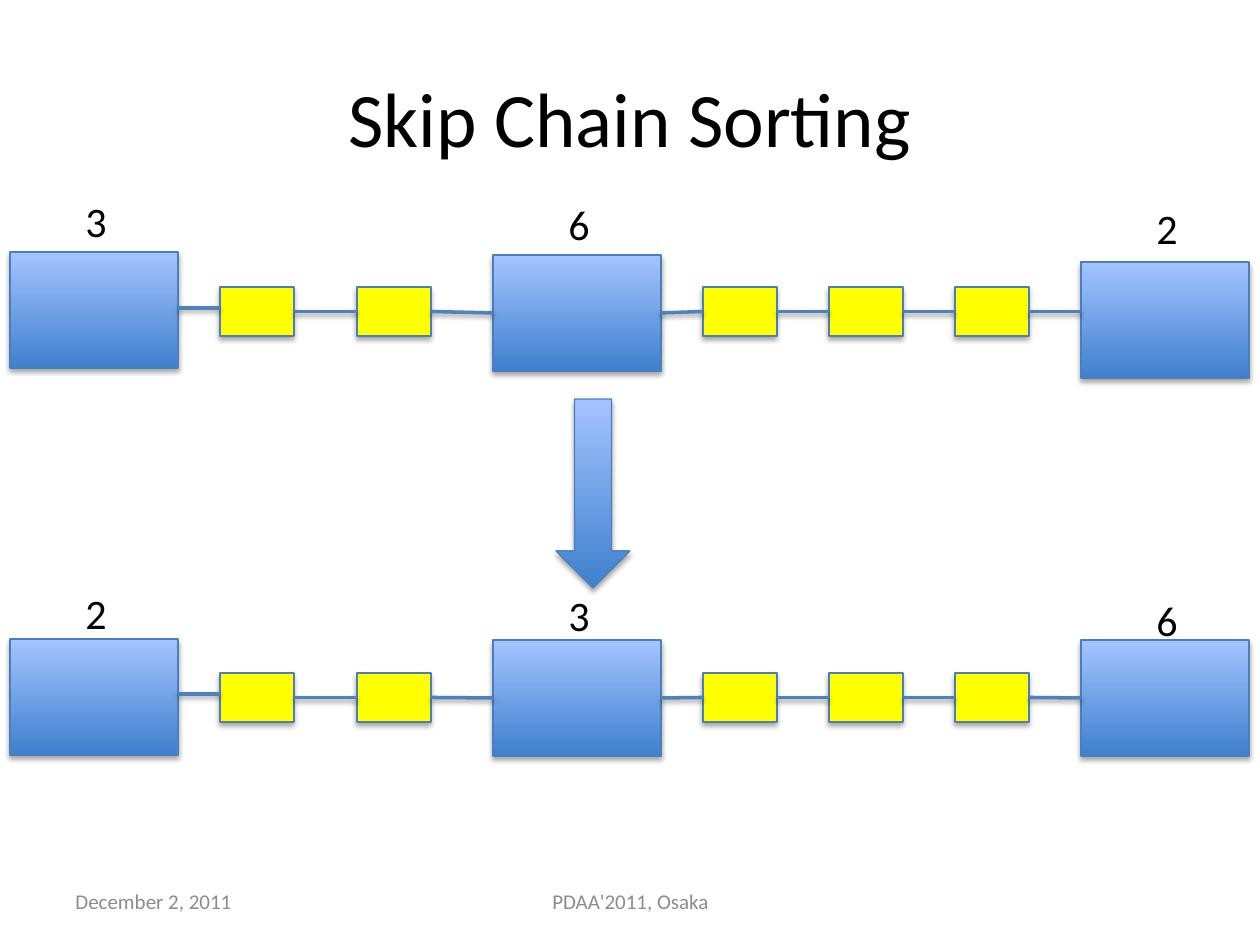
from itertools import pairwise

from lxml import etree
from pptx import Presentation
from pptx.dml.color import RGBColor
from pptx.enum.shapes import MSO_CONNECTOR, MSO_SHAPE
from pptx.enum.text import MSO_ANCHOR, MSO_AUTO_SIZE, PP_ALIGN
from pptx.oxml.ns import qn
from pptx.util import Emu, Pt

RECT, DOWN_ARROW = MSO_SHAPE.RECTANGLE, MSO_SHAPE.DOWN_ARROW
STRAIGHT = MSO_CONNECTOR.STRAIGHT
LEFT, CENTER = PP_ALIGN.LEFT, PP_ALIGN.CENTER
TOP, MIDDLE = MSO_ANCHOR.TOP, MSO_ANCHOR.MIDDLE
FIT_TEXT = MSO_AUTO_SIZE.SHAPE_TO_FIT_TEXT
LEFT_SIDE, RIGHT_SIDE = 1, 3

FONT = "Calibri"
BLACK, GRAY, YELLOW = "000000", "8C8C8C", "FFFF00"
DEEP_BLUE, PALE_BLUE = "3F80CE", "A4C4FF"
OUTLINE, LINK_BLUE = "4B7EBC", "4F81BD"

# Chain layout, relative to the left and top of a chain
KEY_LEFTS, KEY_W, KEY_H = (0, 483, 1071), 168, 116
SKIP_LEFTS, SKIP_TOP, SKIP_W, SKIP_H = (210, 347, 693, 819, 945), 35, 74, 49
LABEL_INDENT, LABEL_W, LABEL_H = 63, 47, 63
FIRST_LINK_Y, LINK_Y = 56, SKIP_TOP + SKIP_H / 2


def px(length):
    return Emu(round(length * 914400 / 126))


def rgb(hex_color):
    return RGBColor.from_string(hex_color)


def add_shadow(shape, alpha, distance):
    properties = shape._element.spPr
    effects = properties.find(qn("a:effectLst"))
    if effects is None:
        effects = etree.SubElement(properties, qn("a:effectLst"))
    shadow = etree.SubElement(
        effects, qn("a:outerShdw"), blurRad=str(Pt(3.1)), dist=str(Pt(distance)),
        dir="5400000", rotWithShape="0")
    color = etree.SubElement(shadow, qn("a:srgbClr"), val=BLACK)
    etree.SubElement(color, qn("a:alpha"), val=str(alpha * 1000))


def add_block(shapes, kind, left, top, width, height, solid=None):
    block = shapes.add_shape(kind, px(left), px(top), px(width), px(height))
    if solid:
        block.fill.solid()
        block.fill.fore_color.rgb = rgb(solid)
    else:
        block.fill.gradient()
        block.fill.gradient_angle = 90
        for stop, color in zip(block.fill.gradient_stops, (DEEP_BLUE, PALE_BLUE)):
            stop.color.rgb = rgb(color)
    block.line.color.rgb = rgb(OUTLINE)
    block.line.width = Pt(0.75)
    block.shadow.inherit = False
    add_shadow(block, 35, 1.8)
    return block


def add_link(shapes, start, end, y):
    link = shapes.add_connector(
        STRAIGHT, start.left + start.width, px(y), end.left, px(y))
    link.line.color.rgb = rgb(LINK_BLUE)
    link.line.width = Pt(2)
    add_shadow(link, 38, 1.6)
    # Join only the ends that meet the middle of a side
    for block, join, side in ((start, link.begin_connect, RIGHT_SIDE),
                              (end, link.end_connect, LEFT_SIDE)):
        if abs(block.top + block.height / 2 - px(y)) < px(2):
            join(block, side)


def add_text(shapes, text, left, top, width, height, size, color=BLACK,
             align=LEFT, anchor=MIDDLE, wrap=True):
    frame = shapes.add_textbox(px(left), px(top), px(width), px(height)).text_frame
    frame.word_wrap = wrap
    frame.vertical_anchor = anchor
    frame.text = text
    paragraph = frame.paragraphs[0]
    paragraph.alignment = align
    font = paragraph.runs[0].font
    font.name, font.size = FONT, Pt(size)
    font.color.rgb = rgb(color)
    return frame


def add_chain(shapes, left, top, key_tops):
    keys = [add_block(shapes, RECT, left + x, top + y, KEY_W, KEY_H)
            for x, y in zip(KEY_LEFTS, key_tops)]
    skips = [add_block(shapes, RECT, left + x, top + SKIP_TOP, SKIP_W, SKIP_H, YELLOW)
             for x in SKIP_LEFTS]
    chain = sorted(keys + skips, key=lambda block: block.left)
    for i, (start, end) in enumerate(pairwise(chain)):
        add_link(shapes, start, end, top + (LINK_Y if i else FIRST_LINK_Y))


def add_labels(shapes, left, top, values, label_tops):
    for value, x, y in zip(values, KEY_LEFTS, label_tops):
        frame = add_text(shapes, value, left + x + LABEL_INDENT, top + y,
                         LABEL_W, LABEL_H, 24, anchor=TOP, wrap=False)
        frame.auto_size = FIT_TEXT


def add_footer(shapes, left, top, height):
    add_text(shapes, "December 2, 2011", left, top, 294, height, 12, GRAY)
    add_text(shapes, "PDAA'2011, Osaka", left + 368, top, 399, height, 12, GRAY, CENTER)


def main():
    prs = Presentation()
    prs.slide_width, prs.slide_height = px(1260), px(945)
    shapes = prs.slides.add_slide(prs.slide_layouts[6]).shapes

    # Title and footer
    add_text(shapes, "Skip Chain Sorting", 63, 38, 1134, 157, 44, align=CENTER)
    add_footer(shapes, 63, 876, 50)

    # Unsorted chain, arrow, sorted chain
    add_chain(shapes, 10, 252, (0, 3, 10))
    add_block(shapes, DOWN_ARROW, 556, 399, 74, 189)
    add_chain(shapes.add_group_shape().shapes, 10, 638, (1, 2, 2))

    # Key values above both chains
    add_labels(shapes, 10, 252, "362", (-63, -60, -56))
    add_labels(shapes, 10, 638, "236", (-57, -55, -50))

    prs.save("out.pptx")


if __name__ == "__main__":
    main()
